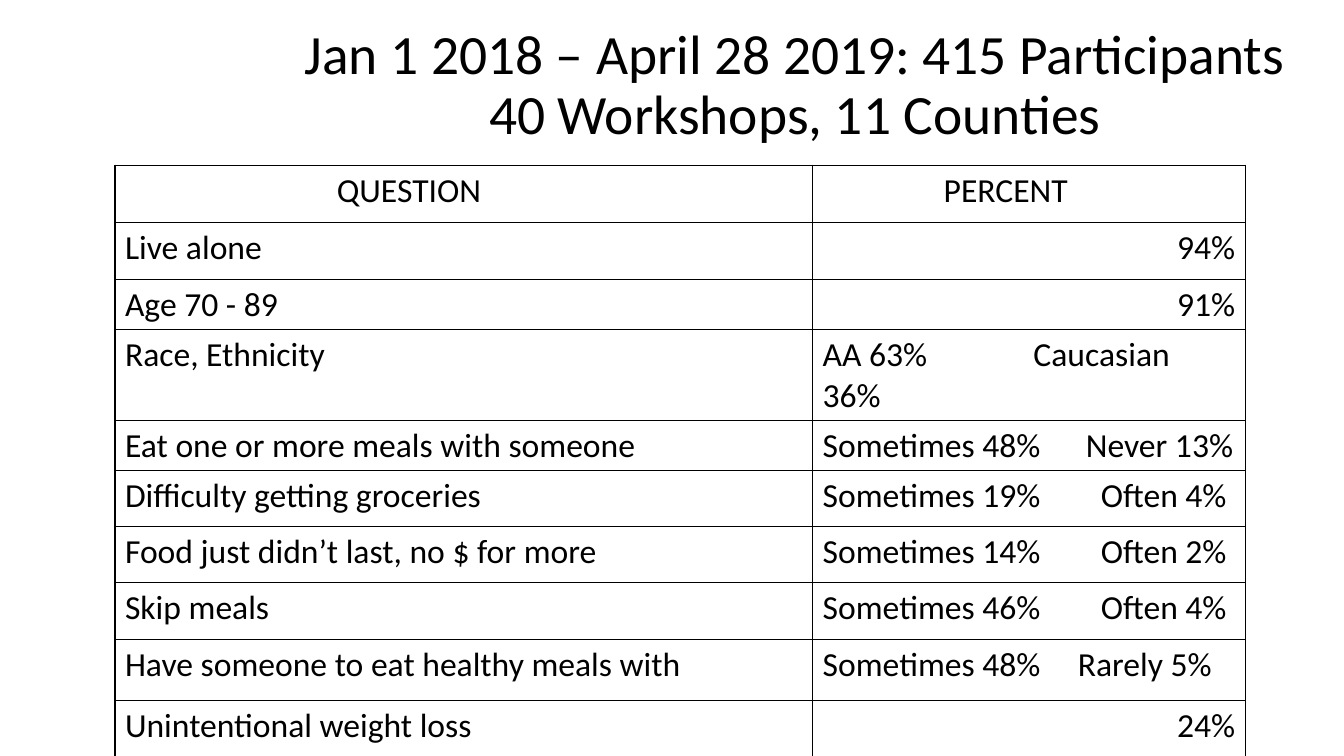
from dataclasses import dataclass

from lxml import etree
from pptx import Presentation
from pptx.dml.color import RGBColor
from pptx.enum.text import MSO_ANCHOR, PP_ALIGN
from pptx.oxml.ns import qn
from pptx.util import Inches, Pt

LEFT, MID, RIGHT = PP_ALIGN.LEFT, PP_ALIGN.CENTER, PP_ALIGN.RIGHT
CENTER = MSO_ANCHOR.MIDDLE
INK = "000000"
PAD = 0.1


@dataclass
class Row:
    label: str
    value: str
    height: float
    align: PP_ALIGN = LEFT
    tab: float = 0
    start: float = PAD
    end: float = PAD


ROWS = [
    Row("QUESTION", "PERCENT", 0.57, MID, start=2.2, end=0.56),
    Row("Live alone", "94%", 0.56, RIGHT),
    Row("Age 70 - 89", "91%", 0.5, RIGHT),
    Row("Race, Ethnicity", "AA 63%\tCaucasian 36%", 0.5, tab=2.09, end=0.2),
    Row("Eat one or more meals with someone", "Sometimes 48%\tNever 13%", 0.5, tab=2.61),
    Row("Difficulty getting groceries", "Sometimes 19%\tOften 4%", 0.55, tab=2.76),
    Row("Food just didn’t last, no $ for more", "Sometimes 14%\tOften 2%", 0.56, tab=2.76),
    Row("Skip meals", "Sometimes 46%\tOften 4%", 0.56, tab=2.76),
    Row("Have someone to eat healthy meals with", "Sometimes 48%\tRarely 5%", 0.61, tab=2.53),
    Row("Unintentional weight loss", "24%", 0.61, RIGHT),
]
WIDTHS = (6.92, 4.29)


def color(code: str) -> RGBColor:
    return RGBColor.from_string(code)


def write(frame, text: str, *, size: float = 24, align: PP_ALIGN = LEFT,
          space: float = 1, tab: float = 0) -> None:
    par = frame.paragraphs[0]
    par.text = text
    par.alignment = align
    par.line_spacing = space
    for run in par.runs:
        font = run.font
        font.name, font.size, font.bold = "Calibri", Pt(size), False
        font.color.rgb = color(INK)
    if tab:
        stops = etree.SubElement(par._p.get_or_add_pPr(), qn("a:tabLst"))
        etree.SubElement(stops, qn("a:tab"), pos=str(Inches(tab)), algn="l")


def border(cell) -> None:
    props = cell._tc.get_or_add_tcPr()
    for spot, side in enumerate(("lnL", "lnR", "lnT", "lnB")):
        line = etree.Element(qn(f"a:{side}"), w=str(Pt(1)))
        fill = etree.SubElement(line, qn("a:solidFill"))
        etree.SubElement(fill, qn("a:srgbClr"), val=INK)
        props.insert(spot, line)


def fill_cell(cell, text: str, *, start: float = PAD, end: float = PAD,
              align: PP_ALIGN = LEFT, tab: float = 0) -> None:
    cell.margin_left, cell.margin_right = Inches(start), Inches(end)
    cell.fill.background()
    write(cell.text_frame, text, align=align, tab=tab)
    border(cell)


def add_title(slide) -> None:
    box = slide.shapes.add_textbox(Inches(0.88), Inches(0.17), Inches(12.06), Inches(1.37))
    frame = box.text_frame
    frame.word_wrap = True
    frame.vertical_anchor = CENTER
    frame.margin_left = Inches(2.05)
    write(frame, "Jan 1 2018 – April 28 2019: 415 Participants\v40 Workshops, 11 Counties",
          size=39.6, align=MID, space=0.9)


def add_grid(slide) -> None:
    high = sum(row.height for row in ROWS)
    grid = slide.shapes.add_table(len(ROWS), len(WIDTHS), Inches(1.14), Inches(1.64),
                                  Inches(sum(WIDTHS)), Inches(high)).table
    grid.first_row = grid.horz_banding = False
    for col, width in zip(grid.columns, WIDTHS):
        col.width = Inches(width)
    for spot, row in enumerate(ROWS):
        grid.rows[spot].height = Inches(row.height)
        fill_cell(grid.cell(spot, 0), row.label, start=row.start)
        fill_cell(grid.cell(spot, 1), row.value, end=row.end, align=row.align, tab=row.tab)


def main() -> None:
    deck = Presentation()
    deck.slide_width, deck.slide_height = Inches(13.33), Inches(7.5)
    slide = deck.slides.add_slide(deck.slide_layouts[6])
    # Heading
    add_title(slide)
    # Survey answers
    add_grid(slide)
    deck.save("out.pptx")


if __name__ == "__main__":
    main()
